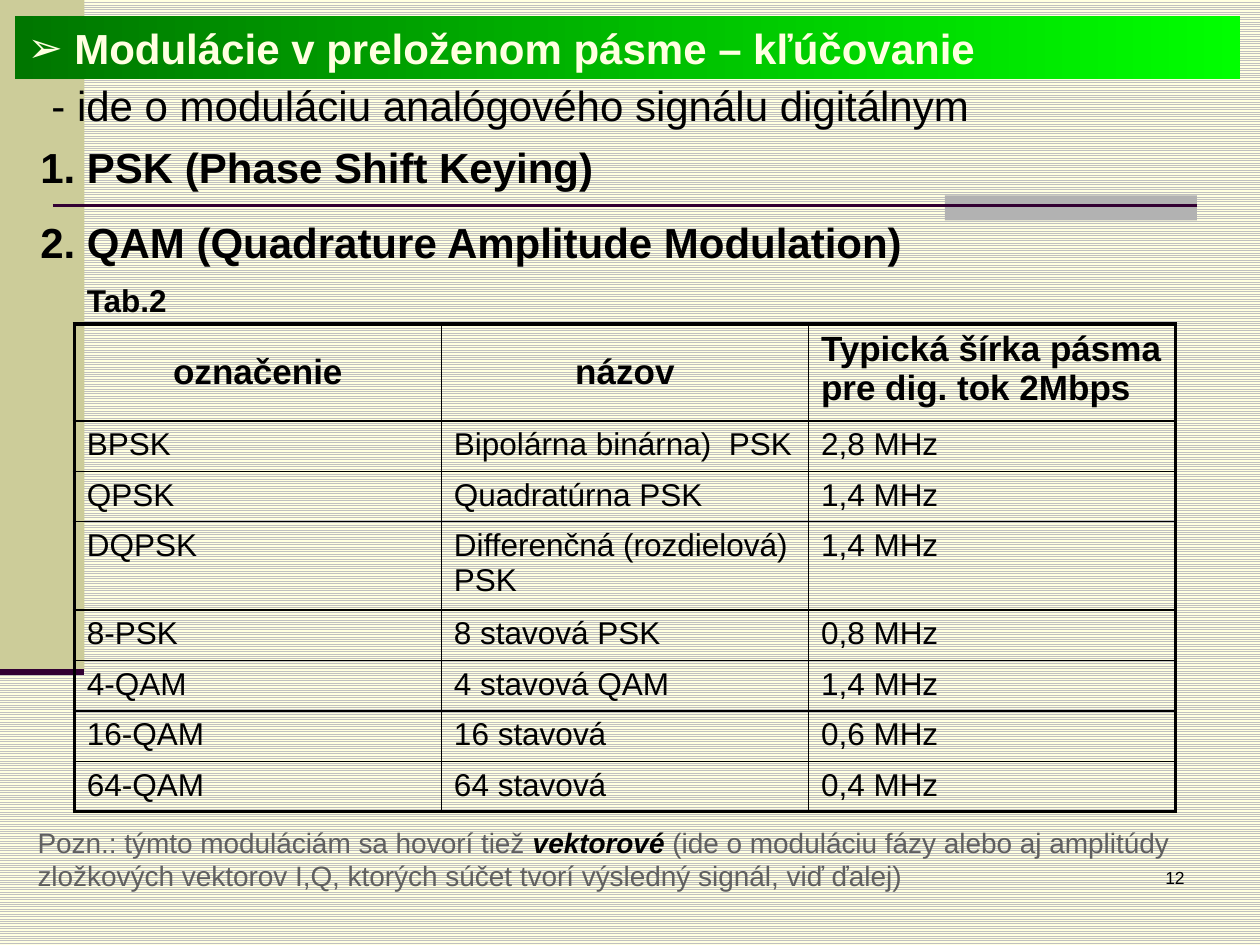
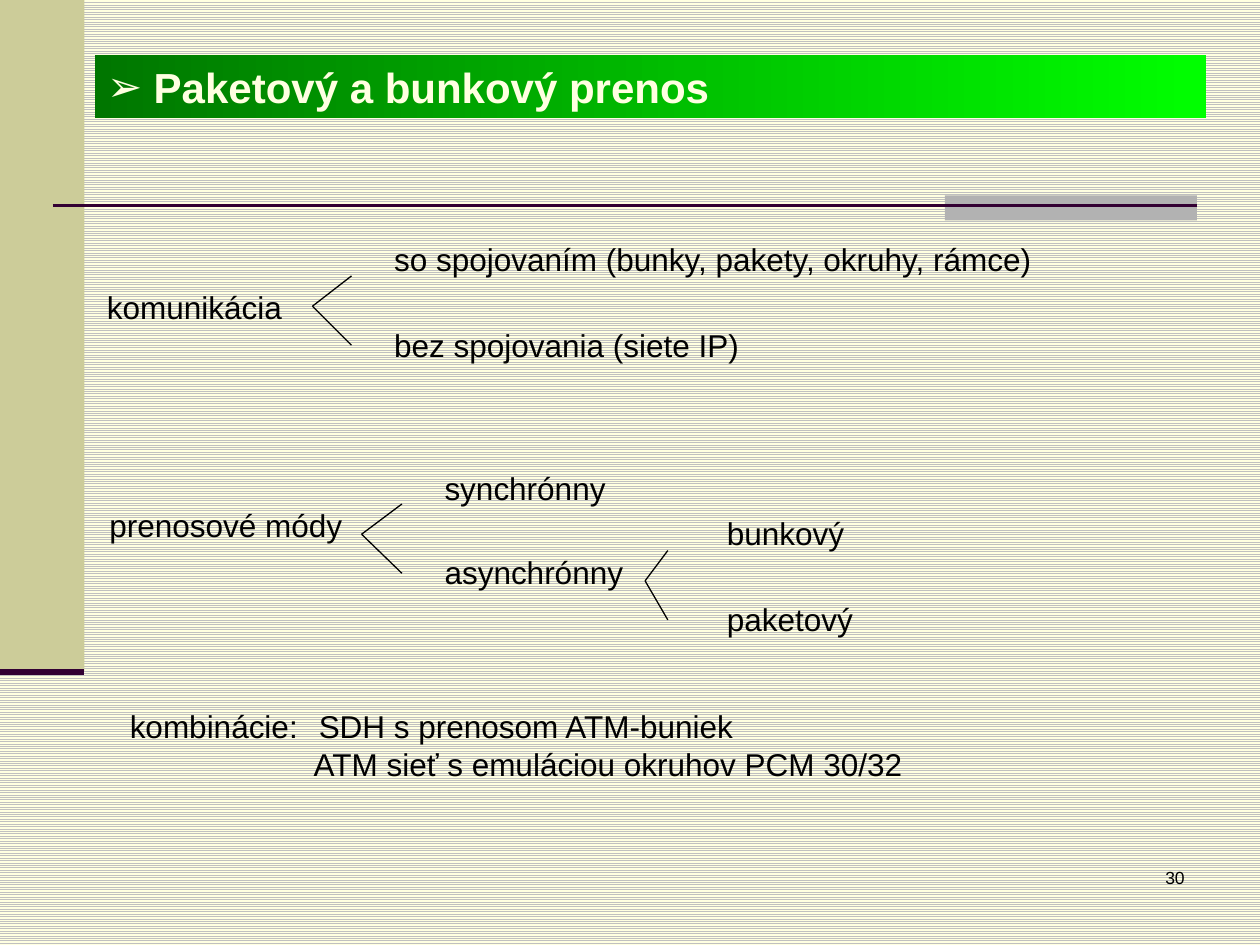
from dataclasses import dataclass
from lxml import etree
from pptx import Presentation
from pptx import util as u
from pptx.dml import color
from pptx.enum import dml, shapes, text
from pptx.oxml import ns


@dataclass
class Theme:
    face: str = "Arial"
    ink: str = "000000"
    pale: str = "FFFFE1"
    stripe: str = "C0C0C0"
    sand: str = "CCCC99"
    block: str = "B2B2B2"
    plum: str = "330033"
    note: str = "5F5F5F"
    dark: str = "007600"
    light: str = "00FF00"
    big: int = 24
    head: int = 20
    base: int = 18
    small: int = 16
    tiny: int = 10


theme = Theme()
rgb = color.RGBColor.from_string
prs = Presentation()
prs.slide_width, prs.slide_height = u.Inches(10), u.Inches(7.5)
unit = prs.slide_width // 10


def at(*spans):
    return [int(span * unit) for span in spans]


def write(frame, lines, size, ink=theme.ink, bold=False, gap=0,
          align=text.PP_ALIGN.LEFT, mark=None, lead=0):
    frame.word_wrap = True
    for i, line in enumerate(lines):
        para = frame.paragraphs[0] if i == 0 else frame.add_paragraph()
        props = para._p.get_or_add_pPr()
        props.set("marL", str(at(lead)[0]))
        props.set("indent", str(at(-lead)[0]))
        if mark:
            etree.SubElement(props, ns.qn("a:buFont")).set("typeface", theme.face)
            etree.SubElement(props, ns.qn("a:buChar")).set("char", mark)
        else:
            etree.SubElement(props, ns.qn("a:buNone"))
        para.alignment = align
        para.space_before = u.Pt(gap if i else 0)
        font = para.font
        font.name, font.size, font.bold = theme.face, u.Pt(size), bold
        font.color.rgb = rgb(ink)
        para.add_run().text = line


back = prs.slide_master.background.fill
back.patterned()
back.pattern = dml.MSO_PATTERN.LIGHT_HORIZONTAL
back.fore_color.rgb = rgb(theme.stripe)
back.back_color.rgb = rgb(theme.pale)

bands = [((0, 0, 0.67, 5.33), theme.sand), ((7.5, 1.55, 2, 0.2), theme.block)]
rules = [(0.42, 1.63, 9.5, 1.63, theme.plum, 1.5),
         (0, 5.33, 0.67, 5.33, theme.plum, 3.5)]
forks = [(2.48, 2.43, 2.79), (2.87, 4.24, 3.19), (5.12, 4.61, 5.3)]
arms = [(x, y, end, y + rise, theme.ink, 0.75)
        for x, y, end in forks for rise in (-0.24, 0.31)]

pages = [
    dict(title="Modulácie v preloženom pásme – kľúčovanie",
         place=(0.12, 0.13, 9.72, 0.5), num="12", rules=rules,
         body=["1. PSK (Phase Shift Keying)",
               "2. QAM (Quadrature Amplitude Modulation)"],
         spot=(0.22, 1.07, 7.56, 1.11), size=theme.big, bold=True, gap=14,
         notes=[("Tab.2", (0.59, 2.18, 1.18, 0.4), theme.base, True),
                ("- ide o moduláciu analógového signálu digitálnym",
                 (0.31, 0.58, 9.53, 0.5), theme.big, False)]),
    dict(title="Paketový a bunkový prenos",
         place=(0.75, 0.44, 8.82, 0.5), num="30", rules=rules + arms,
         body=["kombinácie:\tSDH s prenosom ATM-buniek",
               "ATM sieť s emuláciou okruhov PCM 30/32"],
         spot=(0.93, 5.56, 7.56, 0.71), size=theme.base, bold=False, gap=0,
         notes=[(word, (x, y, wide, 0.4), theme.base, False)
                for word, x, y, wide in [
                    ("komunikácia", 0.75, 2.24, 1.73),
                    ("so spojovaním (bunky, pakety, okruhy, rámce)", 3.03, 1.86, 5.51),
                    ("bez spojovania (siete IP)", 3.03, 2.54, 3.07),
                    ("prenosové módy", 0.77, 3.97, 2.26),
                    ("synchrónny", 3.43, 3.67, 3.07),
                    ("asynchrónny", 3.43, 4.34, 3.07),
                    ("bunkový", 5.67, 4.03, 1.75),
                    ("paketový", 5.67, 4.71, 1.75)]]),
]

for page in pages:
    slide = prs.slides.add_slide(prs.slide_layouts[1])
    title, body = slide.placeholders
    for place, fill in bands:
        band = slide.shapes.add_shape(shapes.MSO_SHAPE.RECTANGLE, *at(*place))
        band.shadow.inherit = False
        band.fill.solid()
        band.fill.fore_color.rgb = rgb(fill)
        band.line.fill.background()
    for *ends, ink, width in page["rules"]:
        rule = slide.shapes.add_connector(shapes.MSO_CONNECTOR.STRAIGHT, *at(*ends))
        rule.line.color.rgb = rgb(ink)
        rule.line.width = u.Pt(width)
        etree.SubElement(rule._element.spPr, ns.qn("a:effectLst"))

    for holder, place in ((title, page["place"]), (body, page["spot"])):
        holder.left, holder.top, holder.width, holder.height = at(*place)
        holder.text_frame.auto_size = text.MSO_AUTO_SIZE.NONE
        slide.shapes.element.append(holder.element)
    title.fill.gradient()
    title.fill.gradient_angle = 0
    for stop, ink in zip(title.fill.gradient_stops, (theme.dark, theme.light)):
        stop.color.rgb = rgb(ink)
        stop.position = float(ink == theme.light)
    title.text_frame.vertical_anchor = text.MSO_ANCHOR.MIDDLE
    write(title.text_frame, [page["title"]], theme.big, theme.pale, True,
          mark="➢", lead=0.37)
    body.text_frame.vertical_anchor = text.MSO_ANCHOR.TOP
    write(body.text_frame, page["body"], page["size"], bold=page["bold"],
          gap=page["gap"])
    for line, place, size, bold in page["notes"]:
        label = slide.shapes.add_textbox(*at(*place))
        write(label.text_frame, [line], size, bold=bold)
    num = slide.shapes.add_textbox(*at(7.42, 6.83, 2.08, 0.5))
    write(num.text_frame, [page["num"]], theme.tiny, align=text.PP_ALIGN.RIGHT)

first, last = body.text_frame.paragraphs
props = first._p.get_or_add_pPr()
tabs = etree.Element(ns.qn("a:tabLst"))
etree.SubElement(tabs, ns.qn("a:tab"), pos=str(at(1.53)[0]), algn="l")
props.find(ns.qn("a:defRPr")).addprevious(tabs)
last._p.get_or_add_pPr().set("marL", str(at(1.46)[0]))

slide = prs.slides[0]
remark = slide.shapes.add_textbox(*at(0.2, 6.5, 9.37, 0.64)).text_frame
write(remark, ["Pozn.: týmto moduláciám sa hovorí tiež "], theme.small, theme.note)
para = remark.paragraphs[0]
strong = para.add_run()
strong.text = "vektorové "
strong.font.bold = strong.font.italic = True
strong.font.color.rgb = rgb(theme.ink)
para.add_run().text = ("(ide o moduláciu fázy alebo aj amplitúdy zložkových vektorov "
                       "I,Q, ktorých súčet tvorí výsledný signál, viď ďalej)")

rows = [
    ("označenie", "názov", "Typická šírka pásma pre dig. tok 2Mbps"),
    ("BPSK", "Bipolárna binárna)  PSK", "2,8 MHz"),
    ("QPSK", "Quadratúrna PSK", "1,4 MHz"),
    ("DQPSK", "Differenčná (rozdielová) PSK", "1,4 MHz"),
    ("8-PSK", "8 stavová PSK", "0,8 MHz"),
    ("4-QAM", "4 stavová QAM", "1,4 MHz"),
    ("16-QAM", "16 stavová", "0,6 MHz"),
    ("64-QAM", "64 stavová", "0,4 MHz"),
]
table = slide.shapes.add_table(len(rows), 3, *at(0.59, 2.57, 8.74, 3.87)).table
table.first_row = table.horz_banding = False
for col in table.columns:
    col.width = at(8.74 / 3)[0]
for r, row in enumerate(rows):
    table.rows[r].height = at({0: 0.77, 3: 0.7}.get(r, 0.4))[0]
    for c, word in enumerate(row):
        cell = table.cell(r, c)
        head = r == 0
        mid = head and c < 2
        write(cell.text_frame, [word], theme.head if head else theme.base, bold=head,
              align=text.PP_ALIGN.CENTER if mid else text.PP_ALIGN.LEFT)
        cell.vertical_anchor = text.MSO_ANCHOR.MIDDLE if mid else text.MSO_ANCHOR.TOP
        outer = dict(L=c == 0, R=c == 2, T=head, B=r == len(rows) - 1)
        for side, edge in outer.items():
            line = etree.SubElement(cell._tc.get_or_add_tcPr(), ns.qn("a:ln" + side),
                                    w=str(u.Pt(2.25 if edge else 1)))
            fill = etree.SubElement(line, ns.qn("a:solidFill"))
            etree.SubElement(fill, ns.qn("a:srgbClr"), val=theme.ink)
        cell.fill.background()

prs.save("out.pptx")
